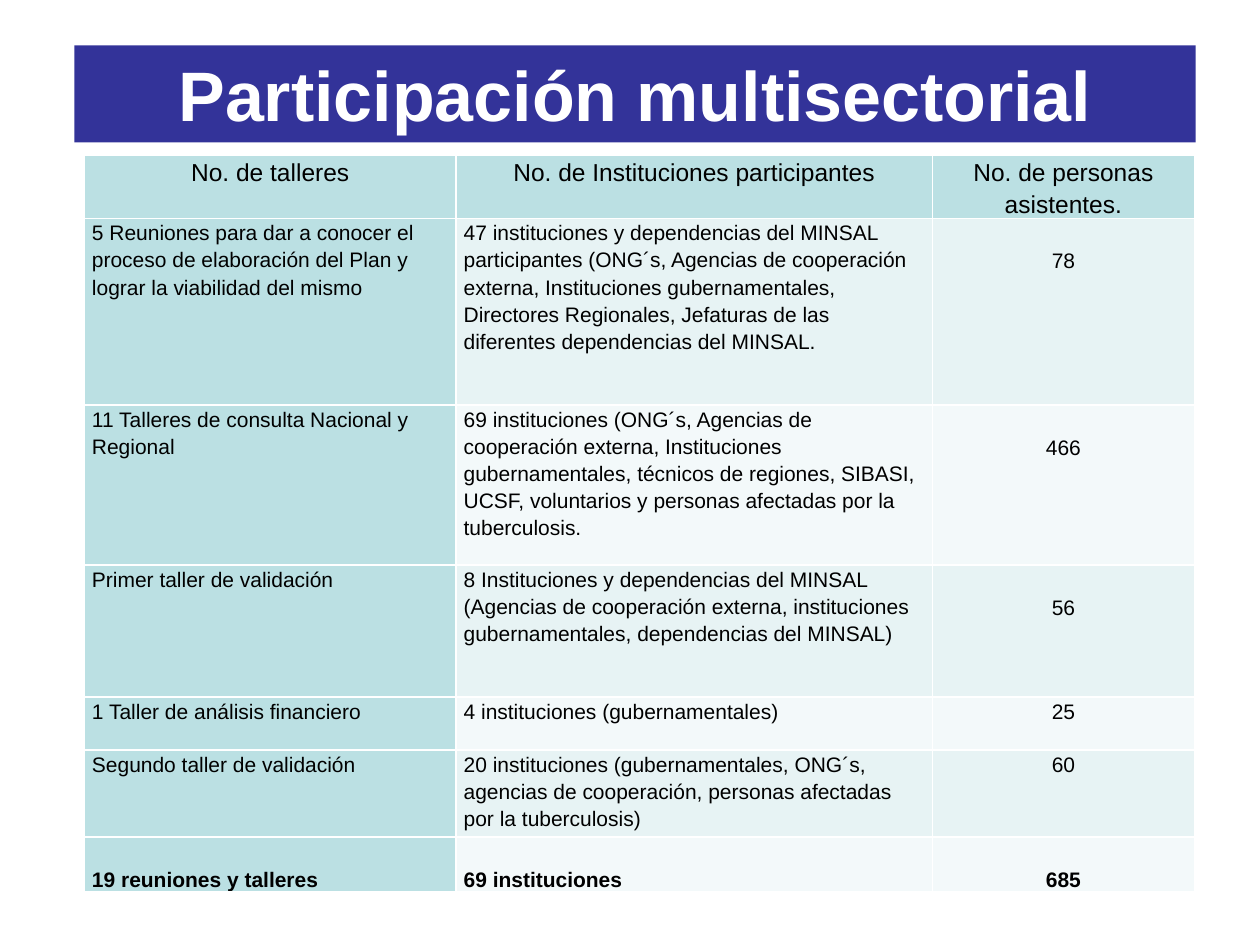
from lxml.etree import SubElement
from pptx import Presentation
from pptx.dml.color import RGBColor
from pptx.enum.text import MSO_ANCHOR, MSO_AUTO_SIZE, PP_ALIGN
from pptx.oxml.ns import qn
from pptx.util import Inches, Pt

COLORS = {
    "banner": "333399",
    "accent": "BBE0E3",
    "band_dark": "E7F3F4",
    "band_light": "F3F9FA",
    "white": "FFFFFF",
    "text": "000000",
}
FONT = "Arial"
LINE_HEIGHT = 0.22
COLUMN_WIDTHS = [2.95, 3.78, 2.08]
ROW_HEIGHTS = [0.5, 1.48, 1.27, 1.05, 0.42, 0.69, 0.42]

ROWS = [
    ["No. de talleres", "No. de Instituciones participantes", "No. de personas asistentes."],
    ["5 Reuniones para dar a conocer el proceso de elaboración del Plan y lograr la "
     "viabilidad del mismo",
     "47 instituciones y dependencias del MINSAL participantes (ONG´s, Agencias de "
     "cooperación externa, Instituciones gubernamentales, Directores Regionales, "
     "Jefaturas de las diferentes dependencias del MINSAL.",
     "78"],
    ["11 Talleres de consulta Nacional y Regional",
     "69 instituciones (ONG´s, Agencias de cooperación externa, Instituciones "
     "gubernamentales, técnicos de regiones, SIBASI, UCSF, voluntarios y personas "
     "afectadas por la tuberculosis.",
     "466"],
    ["Primer taller de validación",
     "8 Instituciones y dependencias del MINSAL (Agencias de cooperación externa, "
     "instituciones gubernamentales, dependencias del MINSAL)",
     "56"],
    ["1 Taller de análisis financiero", "4 instituciones (gubernamentales)", "25"],
    ["Segundo taller de validación",
     "20 instituciones (gubernamentales, ONG´s, agencias de cooperación, personas "
     "afectadas por la tuberculosis)",
     "60"],
    ["19 reuniones y talleres", "69 instituciones", "685"],
]
TOTAL_ROW = len(ROWS) - 1


def color(name):
    return RGBColor.from_string(COLORS[name])


def format_text(para, size, color_name, bold, align):
    para.alignment = align
    for span in para.runs:
        span.font.name = FONT
        span.font.size = Pt(size)
        span.font.bold = bold
        span.font.color.rgb = color(color_name)


def add_borders(cell):
    properties = cell._tc.get_or_add_tcPr()
    for position, side in enumerate(("a:lnL", "a:lnR", "a:lnT", "a:lnB")):
        line = SubElement(properties, qn(side), w=str(Pt(1)))
        fill = SubElement(line, qn("a:solidFill"))
        SubElement(fill, qn("a:srgbClr"), val=COLORS["white"])
        # Borders must come before the cell fill
        properties.insert(position, line)


def add_banner(page, left, top, width, height):
    banner = page.shapes.title
    banner.left, banner.top = Inches(left), Inches(top)
    banner.width, banner.height = Inches(width), Inches(height)
    banner.fill.solid()
    banner.fill.fore_color.rgb = color("banner")
    frame = banner.text_frame
    frame.text = "Participación multisectorial"
    frame.auto_size = MSO_AUTO_SIZE.NONE
    frame.vertical_anchor = MSO_ANCHOR.MIDDLE
    format_text(frame.paragraphs[0], 40, "white", True, PP_ALIGN.CENTER)


def fill_cell(cell, row, column, text):
    header, total = row == 0, row == TOTAL_ROW
    # Totals and the first three attendance figures start one line lower
    lowered = total or (column == 2 and 1 <= row <= 3)
    cell.margin_left = cell.margin_right = Inches(0.06)
    cell.margin_top = Inches(LINE_HEIGHT if lowered else 0)
    cell.margin_bottom = Inches(0)
    cell.text_frame.text = text
    para = cell.text_frame.paragraphs[0]
    para.line_spacing = 1.15
    centered = header or column == 2
    format_text(para, 14 if header else 12, "text", total,
                PP_ALIGN.CENTER if centered else PP_ALIGN.LEFT)

    if header or column == 0:
        fill_name = "accent"
    else:
        fill_name = "band_dark" if row % 2 else "band_light"
    cell.fill.solid()
    cell.fill.fore_color.rgb = color(fill_name)
    add_borders(cell)


def add_workshop_table(page, left, top):
    box = page.shapes.add_table(
        len(ROWS), len(COLUMN_WIDTHS), Inches(left), Inches(top),
        Inches(sum(COLUMN_WIDTHS)), Inches(sum(ROW_HEIGHTS)))
    table = box.table
    for column, width in zip(table.columns, COLUMN_WIDTHS):
        column.width = Inches(width)
    for table_row, height in zip(table.rows, ROW_HEIGHTS):
        table_row.height = Inches(height)
    for row, texts in enumerate(ROWS):
        for column, text in enumerate(texts):
            fill_cell(table.cell(row, column), row, column, text)


def main():
    deck = Presentation()
    deck.slide_width, deck.slide_height = Inches(10), Inches(7.5)
    page = deck.slides.add_slide(deck.slide_layouts[5])
    # Title banner, then the table of workshops
    add_banner(page, 0.59, 0.36, 8.9, 0.77)
    add_workshop_table(page, 0.67, 1.23)
    deck.save("out.pptx")


if __name__ == "__main__":
    main()
